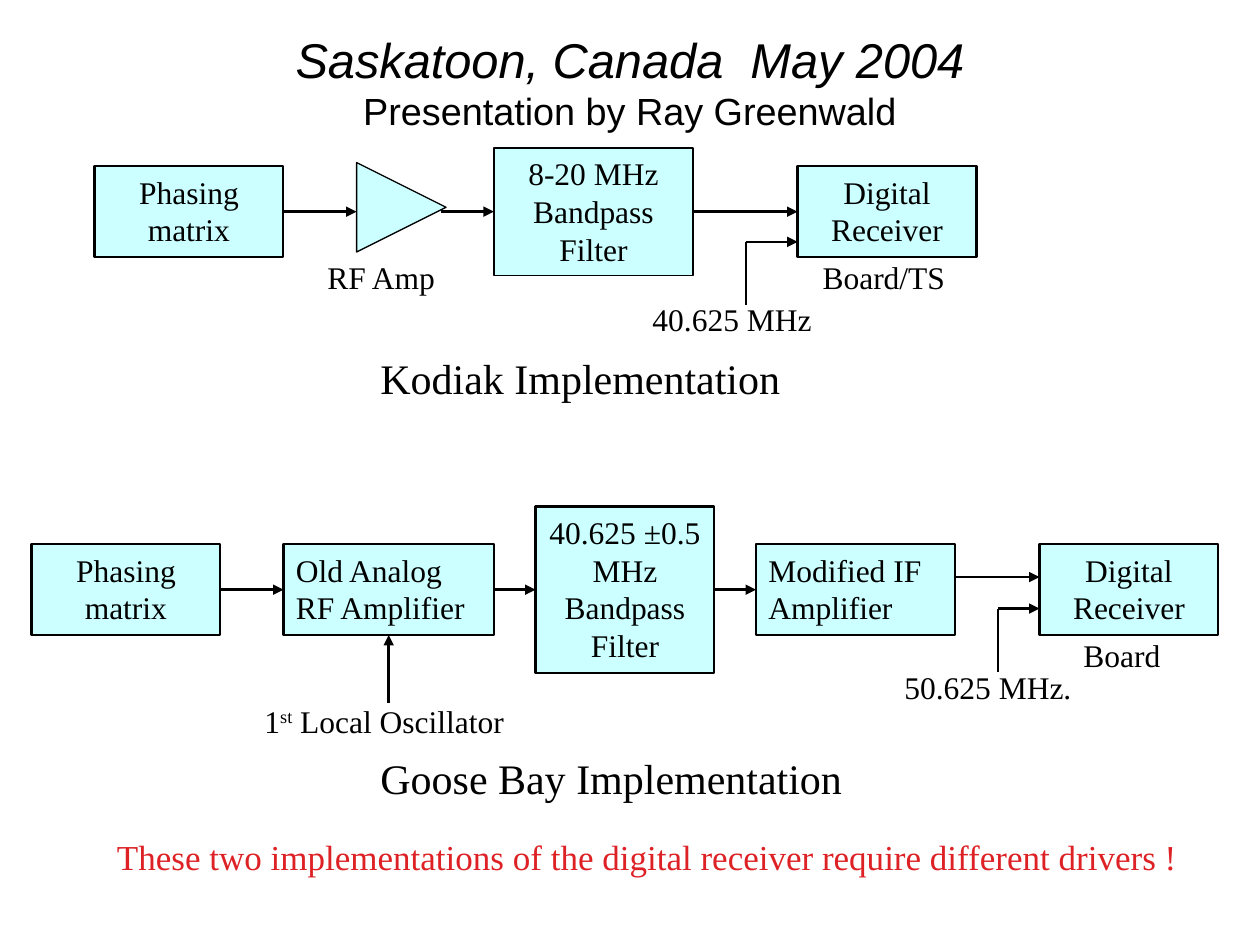
from pptx import Presentation
from pptx.dml.color import RGBColor
from pptx.enum.shapes import MSO_CONNECTOR, MSO_SHAPE
from pptx.enum.text import MSO_ANCHOR, MSO_AUTO_SIZE, PP_ALIGN
from pptx.oxml.ns import qn
from pptx.util import Inches, Pt
from lxml.etree import SubElement

THEME = {
    "ink": RGBColor(0x00, 0x00, 0x00), "box": RGBColor(0xCC, 0xFF, 0xFF),
    "alert": RGBColor(0xDD, 0x21, 0x25),
    "heading": "Arial", "body": "Times New Roman",
    "title": 27.9, "subtitle": 21.6, "caption": 24, "note": 20, "label": 18,
    "thin": 0.75, "edge": 1.25, "arrow": 1.5,
}
CENTER, LEFT = PP_ALIGN.CENTER, PP_ALIGN.LEFT
TOP_SIDE, LEFT_SIDE, BOTTOM_SIDE, RIGHT_SIDE = range(4)

# Content: boxes are key: (text, left, width, height, alignment, edge), centred on the row axis
KODIAK_AXIS, GOOSE_AXIS = 1.68, 4.68
KODIAK = {
    "matrix": ("Phasing matrix", 0.75, 1.5, 0.72, CENTER, "edge"),
    "filter": ("8-20 MHz Bandpass Filter", 3.92, 1.58, 1.01, CENTER, "thin"),
    "receiver": ("Digital Receiver", 6.33, 1.42, 0.72, CENTER, "edge"),
}
GOOSE_BAY = {
    "matrix": ("Phasing matrix", 0.25, 1.5, 0.72, CENTER, "edge"),
    "rf_amp": ("Old Analog RF Amplifier", 2.25, 1.67, 0.72, LEFT, "edge"),
    "filter": ("40.625 ±0.5 MHz Bandpass Filter", 4.25, 1.42, 1.32, CENTER, "edge"),
    "if_amp": ("Modified IF Amplifier", 6, 1.58, 0.72, LEFT, "edge"),
    "receiver": ("Digital Receiver", 8.25, 1.42, 0.72, CENTER, "edge"),
}
# Labels: text, left, top, width, height, size
LABELS = [
    ("RF Amp", 2.5, 2, 1.17, 0.4, "label"),
    ("Board/TS", 6.43, 2, 1.58, 0.4, "label"),
    ("40.625 MHz", 5.08, 2.33, 1.75, 0.4, "label"),
    ("Kodiak Implementation", 2.92, 2.75, 4, 0.5, "caption"),
    ("Board", 8.5, 5, 0.93, 0.4, "label"),
    ("50.625 MHz.", 7.08, 5.25, 2, 0.4, "label"),
    ("Goose Bay Implementation", 2.92, 5.92, 4.92, 0.5, "caption"),
]
OSCILLATOR = ("1", "st", " Local Oscillator")
WARNING = "These two implementations of the digital receiver require different drivers !"

prs = Presentation()
prs.slide_width, prs.slide_height = Inches(10), Inches(7.5)
slide = prs.slides.add_slide(prs.slide_layouts[5])
shapes = slide.shapes


def write(paragraph, text, size="label", font="body", color="ink",
          italic=False, align=LEFT, superscript=False):
    """Append one formatted run to a paragraph."""
    paragraph.alignment = align
    run = paragraph.add_run()
    run.text = text
    run.font.size, run.font.name = Pt(THEME[size]), THEME[font]
    run.font.color.rgb, run.font.italic = THEME[color], italic
    if superscript:
        run.font._element.set("baseline", "30000")


def add_label(left, top, width, height):
    frame = shapes.add_textbox(*map(Inches, (left, top, width, height))).text_frame
    frame.word_wrap = True
    return frame.paragraphs[0]


def add_block(kind, left, top, width, height, edge):
    block = shapes.add_shape(kind, *map(Inches, (left, top, width, height)))
    block.shadow.inherit = False
    block.fill.solid()
    block.fill.fore_color.rgb = THEME["box"]
    block.line.color.rgb, block.line.width = THEME["ink"], Pt(THEME[edge])
    return block


def add_row(boxes, axis):
    row = {}
    for key, (text, left, width, height, align, edge) in boxes.items():
        block = add_block(MSO_SHAPE.RECTANGLE, left, axis - height / 2, width, height, edge)
        block.text_frame.word_wrap = True
        block.text_frame.vertical_anchor = MSO_ANCHOR.TOP
        write(block.text_frame.paragraphs[0], text, align=align)
        row[key] = block
    return row


def add_wire(start, end, begin=None, finish=None, arrow=True):
    """Draw a line; begin and finish are (block, side) joints."""
    wire = shapes.add_connector(MSO_CONNECTOR.STRAIGHT, *map(Inches, start + end))
    if begin:
        wire.begin_connect(*begin)
    if finish:
        wire.end_connect(*finish)
    wire.line.color.rgb, wire.line.width = THEME["ink"], Pt(THEME["arrow"])
    if arrow:
        SubElement(wire.line._get_or_add_ln(), qn("a:tailEnd"), type="triangle")
    SubElement(wire._element.spPr, qn("a:effectLst"))


def join(source, target, axis):
    add_wire((source.left.inches + source.width.inches, axis), (target.left.inches, axis),
             (source, RIGHT_SIDE), (target, LEFT_SIDE))


def add_clock_input(receiver, corner_x, y):
    """Clock signal rises from below and turns into the receiver."""
    add_wire((corner_x, y), (receiver.left.inches, y))
    add_wire((corner_x, y), (corner_x, y + 0.5), arrow=False)


# Title
title = shapes.title
title.left, title.top, title.width, title.height = map(Inches, (0.5, 0.17, 9, 0.95))
title.text_frame.auto_size = MSO_AUTO_SIZE.NONE
title.text_frame.vertical_anchor = MSO_ANCHOR.MIDDLE
heading = title.text_frame.paragraphs[0]
write(heading, "Saskatoon, Canada  May 2004", size="title", font="heading", italic=True, align=CENTER)
heading.add_line_break()
write(heading, "Presentation by Ray Greenwald", size="subtitle", font="heading", align=CENTER)

# Kodiak chain, with the amplifier triangle pointing right
kodiak = add_row(KODIAK, KODIAK_AXIS)
amplifier = add_block(MSO_SHAPE.ISOSCELES_TRIANGLE, 2.83, 1.29, 0.71, 0.71, "thin")
amplifier.rotation = 90
add_wire((2.25, KODIAK_AXIS), (2.83, KODIAK_AXIS), begin=(kodiak["matrix"], RIGHT_SIDE))
add_wire((3.5, KODIAK_AXIS), (3.92, KODIAK_AXIS), finish=(kodiak["filter"], LEFT_SIDE))
join(kodiak["filter"], kodiak["receiver"], KODIAK_AXIS)
add_clock_input(kodiak["receiver"], 5.92, 1.92)

# Goose Bay chain
goose = add_row(GOOSE_BAY, GOOSE_AXIS)
chain = [goose[key] for key in ("matrix", "rf_amp", "filter", "if_amp")]
for source, target in zip(chain, chain[1:]):
    join(source, target, GOOSE_AXIS)
add_wire((7.58, 4.58), (8.25, 4.58))
add_clock_input(goose["receiver"], 7.92, 4.83)
rf_amp = goose["rf_amp"]
oscillator_x = rf_amp.left.inches + rf_amp.width.inches / 2
add_wire((oscillator_x, 5.58), (oscillator_x, 5.08), finish=(rf_amp, BOTTOM_SIDE))

# Labels, captions and closing warning
for text, left, top, width, height, size in LABELS:
    write(add_label(left, top, width, height), text, size=size)
oscillator = add_label(2, 5.52, 2.58, 0.4)
for position, part in enumerate(OSCILLATOR):
    write(oscillator, part, superscript=position == 1)
write(add_label(0.83, 6.58, 8.67, 0.44), WARNING, size="note", color="alert")

prs.save("out.pptx")
